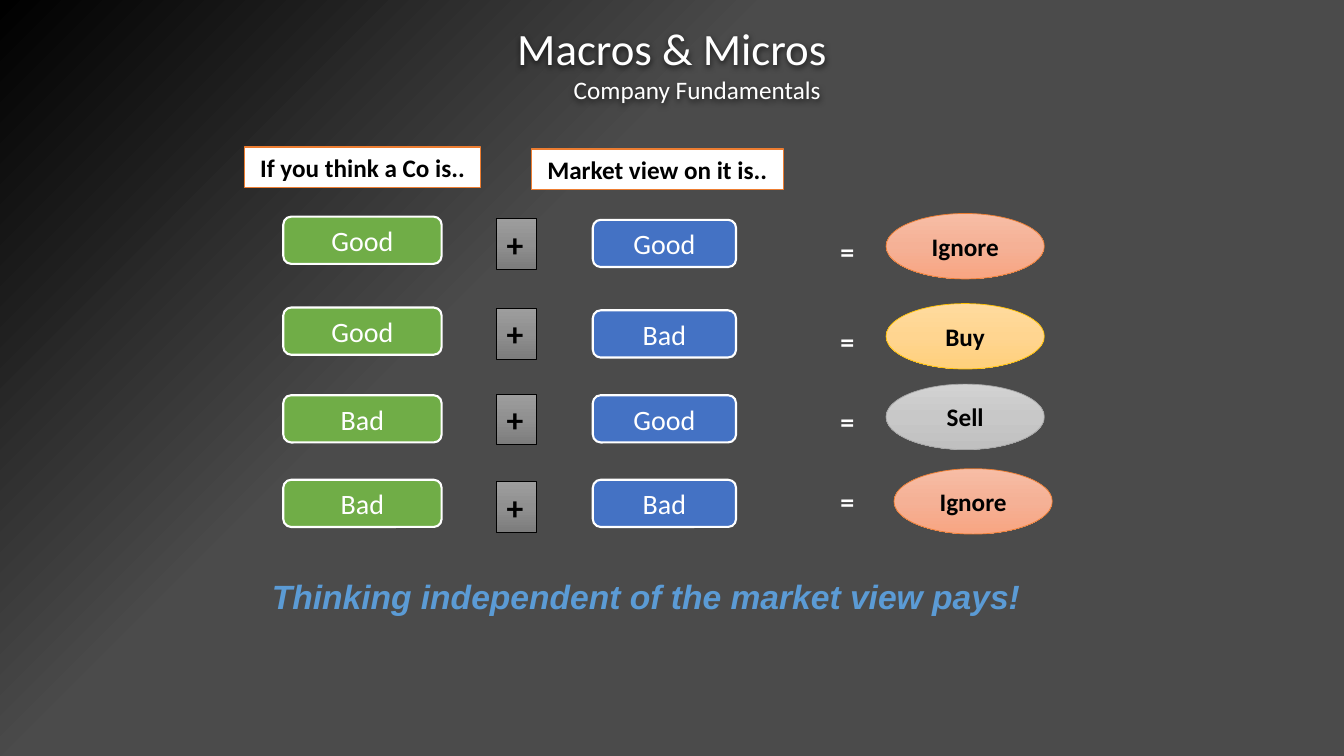
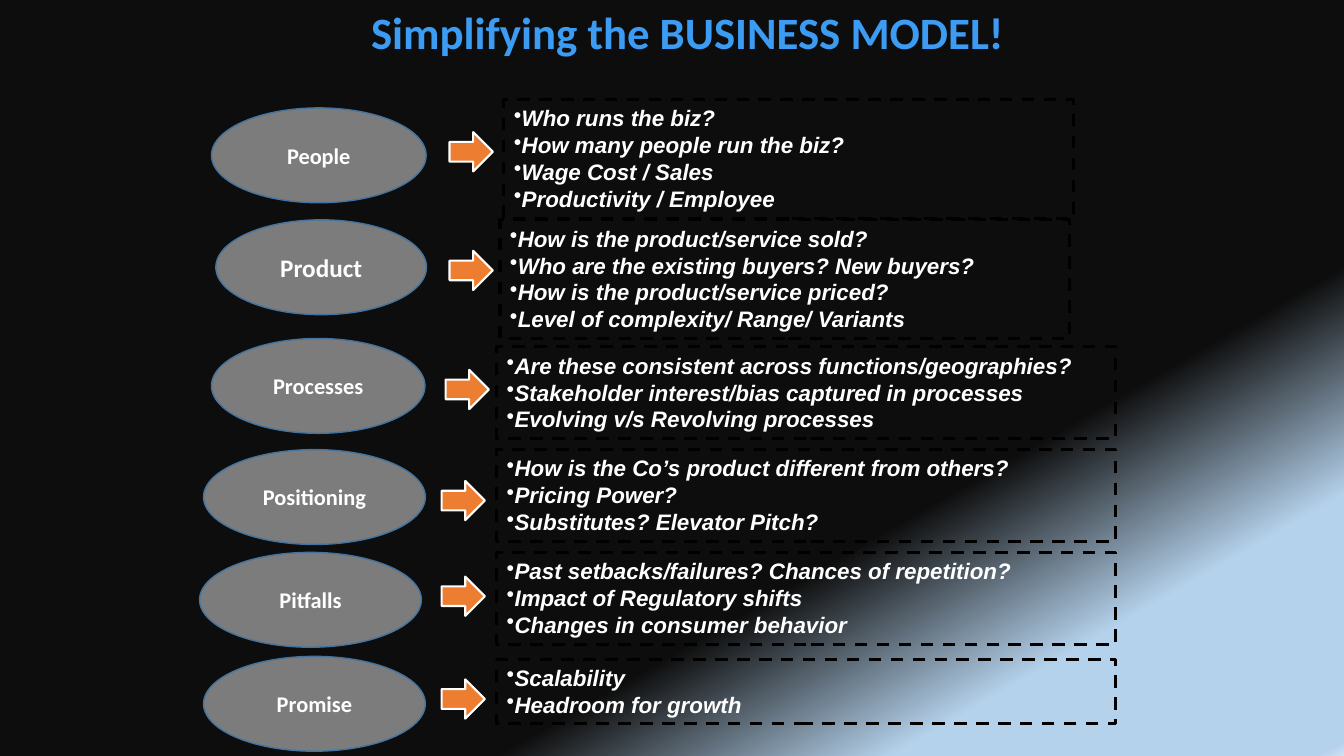
from dataclasses import dataclass

from lxml.etree import SubElement
from pptx import Presentation
from pptx.dml.color import RGBColor
from pptx.enum.dml import MSO_LINE
from pptx.enum.shapes import MSO_SHAPE as Shape
from pptx.enum.text import MSO_ANCHOR as Anchor
from pptx.enum.text import MSO_AUTO_SIZE as AutoSize
from pptx.enum.text import PP_ALIGN as Align
from pptx.oxml.ns import qn
from pptx.util import Cm, Pt


@dataclass(frozen=True)
class Theme:
    """Colours, gradients, fonts and type sizes of the presentation."""

    white: str = "FFFFFF"
    black: str = "000000"
    green: str = "70AD47"
    blue: str = "4472C4"
    orange: str = "ED7D31"
    gold: str = "FFC000"
    silver: str = "A5A5A5"
    grey: str = "7C7C7C"
    outline: str = "43739E"
    slogan: str = "5B9BD5"
    heading: str = "3C9CF4"
    charcoal: tuple = ((63, "4B4B4B"), (100, "000000"))
    dawn: tuple = ((68, "0D0D0D"), (83, "B5D2EC"), (99, "B5D2EC"), (100, "CEE1F2"))
    grey_blend: tuple = ((0, "9D9D9D"), (50, "909090"), (100, "7C7C7C"))
    orange_blend: tuple = ((0, "F7BDA5"), (50, "F5B196"), (100, "F8A582"))
    gold_blend: tuple = ((0, "FFDB9E"), (50, "FFD590"), (100, "FFD07C"))
    silver_blend: tuple = ((0, "D2D2D2"), (50, "C8C8C8"), (100, "C0C0C0"))
    font: str = "Calibri"
    accent_font: str = "Arial"
    title_size: int = 32
    large_size: int = 24
    medium_size: int = 20
    text_size: int = 18
    small_size: int = 16


THEME = Theme()

VERDICTS = {
    "Ignore": (THEME.orange_blend, THEME.orange),
    "Buy": (THEME.gold_blend, THEME.gold),
    "Sell": (THEME.silver_blend, THEME.silver),
}

VIEW_ROWS = [
    ("Good", "Good", "Ignore", 22.33, (5.46, 5.51, 5.54, 5.79, 5.38)),
    ("Good", "Bad", "Buy", 22.33, (7.75, 7.77, 7.82, 8.05, 7.65)),
    ("Bad", "Good", "Sell", 22.33, (9.96, 9.93, 9.96, 10.08, 9.68)),
    ("Bad", "Bad", "Ignore", 22.53, (12.09, 12.14, 12.09, 12.09, 11.81)),
]

STAGES = [
    ("People", THEME.small_size, (5.33, 2.72, 5.41), (11.33, 3.33), (12.7, 2.51, 14.35),
     ["Who runs the biz?", "How many people run the biz?",
      "Wage Cost / Sales", "Productivity / Employee"]),
    ("Product", THEME.text_size, (5.44, 5.54, 5.31), (11.33, 6.32), (12.6, 5.54, 14.35),
     ["How is the product/service sold?", "Who are the existing buyers? New buyers?",
      "How is the product/service priced?", "Level of complexity/ Range/ Variants"]),
    ("Processes", THEME.small_size, (5.33, 8.53, 5.38), (11.23, 9.32), (12.52, 8.74, 15.6),
     ["Are these consistent across functions/geographies?",
      "Stakeholder interest/bias captured in processes",
      "Evolving v/s Revolving processes"]),
    ("Positioning", THEME.small_size, (5.13, 11.33, 5.59), (11.13, 12.12), (12.52, 11.33, 15.6),
     ["How is the Co’s product different from others?", "Pricing Power?",
      "Substitutes? Elevator Pitch?"]),
    ("Pitfalls", THEME.small_size, (5.03, 13.92, 5.59), (11.13, 14.53), (12.52, 13.92, 15.6),
     ["Past setbacks/failures? Chances of repetition?",
      "Impact of Regulatory shifts", "Changes in consumer behavior"]),
    ("Promise", THEME.small_size, (5.13, 16.54, 5.59), (11.13, 17.12), (12.52, 16.61, 15.6),
     ["Scalability", "Headroom for growth"]),
]


def set_format(target, values):
    """Set each named attribute of the target."""
    for name, value in values.items():
        setattr(target, name, value)


def set_gradient(fill, element, stops, angle=None):
    """Give a fill colour stops, linear at an angle or circling the bottom right corner."""
    fill.gradient()
    gradient = element.find(".//" + qn("a:gradFill"))
    for child in list(gradient):
        gradient.remove(child)
    stop_list = SubElement(gradient, qn("a:gsLst"))
    for position, color in stops:
        stop = SubElement(stop_list, qn("a:gs"), pos=str(position * 1000))
        SubElement(stop, qn("a:srgbClr"), val=color)
    if angle is None:
        circle = SubElement(gradient, qn("a:path"), path="circle")
        SubElement(circle, qn("a:fillToRect"), l="100000", t="100000")
        SubElement(gradient, qn("a:tileRect"), r="-100000", b="-100000")
    else:
        SubElement(gradient, qn("a:lin"), ang=str(angle * 60000), scaled="0")


def write_text(shape, lines, size, color=THEME.white, font=THEME.font, bold=False,
               italic=False, align=Align.CENTER, anchor=Anchor.MIDDLE, bullet=None):
    """Write lines as paragraphs of one style and return the paragraphs."""
    frame = shape.text_frame
    set_format(frame, {"word_wrap": True, "auto_size": AutoSize.NONE,
                       "vertical_anchor": anchor})
    frame.text = "\n".join(lines)
    for paragraph in frame.paragraphs:
        paragraph.alignment = align
        run_font = paragraph.runs[0].font
        set_format(run_font, {"size": Pt(size), "name": font, "bold": bold, "italic": italic})
        run_font.color.rgb = RGBColor.from_string(color)
        if bullet:
            properties = paragraph._p.get_or_add_pPr()
            SubElement(properties, qn("a:buChar"), char=bullet)
    return frame.paragraphs


def add_box(slide, kind, place, fill, line, width, dash=None):
    """Add a preset shape with a plain, gradient or empty fill."""
    shape = slide.shapes.add_shape(kind, *map(Cm, place))
    shape.shadow.inherit = False
    if fill is None:
        shape.fill.background()
    elif isinstance(fill, str):
        shape.fill.solid()
        shape.fill.fore_color.rgb = RGBColor.from_string(fill)
    else:
        set_gradient(shape.fill, shape.element, fill, 90)
    set_format(shape.line, {"width": Pt(width), "dash_style": dash})
    shape.line.color.rgb = RGBColor.from_string(line)
    return shape


def add_label(slide, place, text, size, **style):
    """Add a left-aligned text box and return its paragraph."""
    box = slide.shapes.add_textbox(*map(Cm, place))
    return write_text(box, [text], size, align=Align.LEFT, anchor=Anchor.TOP, **style)[0]


def add_slide(presentation, stops, angle, title_place, title_lines, **style):
    """Add a slide with a gradient background and a title."""
    slide = presentation.slides.add_slide(presentation.slide_layouts[5])
    set_gradient(slide.background.fill, slide.element, stops, angle)
    title = slide.shapes.title
    set_format(title, dict(zip(("left", "top", "width", "height"), map(Cm, title_place))))
    write_text(title, title_lines, THEME.title_size, **style)
    return slide


def add_soft_shadow(shape):
    """Cast a soft shadow straight down."""
    effects = SubElement(shape.element.spPr, qn("a:effectLst"))
    shadow = SubElement(effects, qn("a:outerShdw"), blurRad="57150", dist="19050",
                        dir="5400000", algn="ctr", rotWithShape="0")
    color = SubElement(shadow, qn("a:srgbClr"), val=THEME.black)
    SubElement(color, qn("a:alpha"), val="63000")


def add_view_row(slide, own_view, market_view, verdict, verdict_left, tops):
    """Add one row: own view plus market view equals verdict."""
    own_top, plus_top, market_top, equals_top, verdict_top = tops
    for left, top, width, fill, text in (
        (7.14, own_top, 3.99, THEME.green, own_view),
        (14.94, market_top, 3.61, THEME.blue, market_view),
    ):
        view = add_box(slide, Shape.ROUNDED_RECTANGLE, (left, top, width, 1.19),
                       fill, THEME.white, 1.5)
        write_text(view, [text], THEME.medium_size)
    plus = add_box(slide, Shape.RECTANGLE, (12.52, plus_top, 1, 1.28),
                   THEME.grey_blend, THEME.black, 0.5)
    write_text(plus, ["+"], THEME.large_size, THEME.black, bold=True,
               align=Align.LEFT, anchor=Anchor.TOP)
    add_label(slide, (20.93, equals_top, 1, 1.11), "=", THEME.medium_size, bold=True)
    fill, line = VERDICTS[verdict]
    oval = add_box(slide, Shape.OVAL, (verdict_left, verdict_top, 3.99, 1.65), fill, line, 0.5)
    write_text(oval, [verdict], THEME.text_size, THEME.black, bold=True)


def add_stage(slide, name, size, oval_place, arrow_place, list_place, questions):
    """Add a stage oval, its arrow and its dashed list of questions."""
    oval = add_box(slide, Shape.OVAL, (*oval_place, 2.39), THEME.grey, THEME.outline, 1)
    write_text(oval, [name], size, bold=True)
    add_box(slide, Shape.RIGHT_ARROW, (*arrow_place, 1.09, 0.99), THEME.orange, THEME.white, 1.5)
    height = 0.26 + 0.685 * len(questions)
    panel = add_box(slide, Shape.RECTANGLE, (*list_place, height), None, THEME.black,
                    2.25, MSO_LINE.DASH)
    write_text(panel, questions, THEME.small_size, font=THEME.accent_font, bold=True,
               italic=True, align=Align.LEFT, anchor=Anchor.TOP, bullet="•")


def build_fundamentals(presentation):
    """Build the slide that compares own view and market view."""
    slide = add_slide(presentation, THEME.charcoal, None, (8.92, -0.74, 16.03, 4.65),
                      ["Macros & Micros", "Company Fundamentals"])
    title = slide.shapes.title
    add_soft_shadow(title)
    subtitle = title.text_frame.paragraphs[1]
    subtitle.level = 1
    subtitle.runs[0].font.size = Pt(THEME.text_size)
    set_margin = subtitle._p.get_or_add_pPr().set
    set_margin("marL", str(Cm(1.27)))
    set_margin("indent", "0")
    for place, text in (
        ((6.17, 3.71, 5.94, 1.02), "If you think a Co is.."),
        ((13.39, 3.76, 6.35, 1.02), "Market view on it is.."),
    ):
        header = add_box(slide, Shape.RECTANGLE, place, THEME.white, THEME.orange, 1)
        write_text(header, [text], THEME.text_size, THEME.black, bold=True, anchor=Anchor.TOP)
    for row in VIEW_ROWS:
        add_view_row(slide, *row)
    slogan = add_label(slide, (6.6, 13.89, 24, 1.8),
                       "Thinking independent of the market view pays!", THEME.large_size,
                       color=THEME.slogan, font=THEME.accent_font, bold=True, italic=True)
    slogan.line_spacing = 1.5


def build_business_model(presentation):
    """Build the slide that lists the questions of each stage."""
    slide = add_slide(presentation, THEME.dawn, 60, (5.03, 0, 24.61, 1.78),
                      ["Simplifying the BUSINESS MODEL!"], color=THEME.heading,
                      bold=True, anchor=Anchor.TOP)
    for stage in STAGES:
        add_stage(slide, *stage)


def main():
    """Build and save the presentation."""
    presentation = Presentation()
    set_format(presentation, {"slide_width": Cm(33.87), "slide_height": Cm(19.05)})
    build_fundamentals(presentation)
    build_business_model(presentation)
    presentation.save("out.pptx")


if __name__ == "__main__":
    main()
